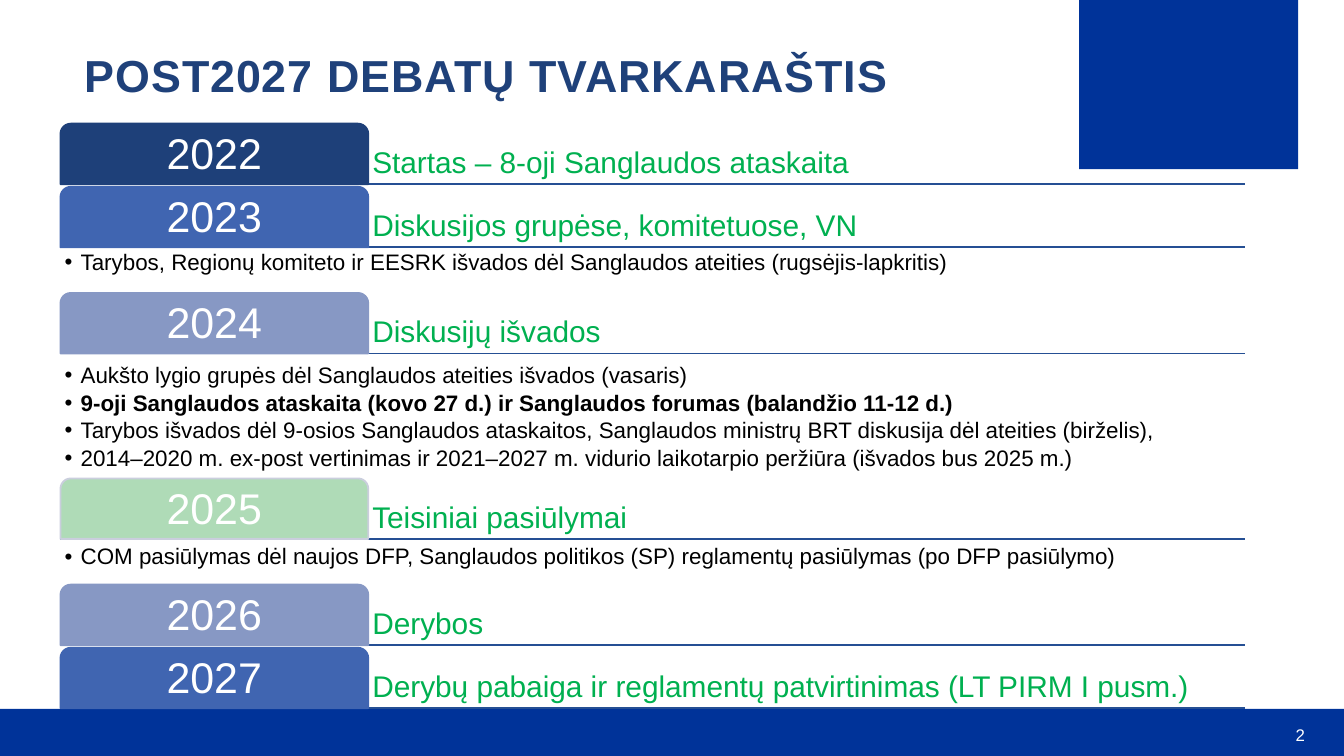
from dataclasses import dataclass
from typing import NamedTuple

from lxml.etree import SubElement
from pptx import Presentation
from pptx.dml.color import RGBColor
from pptx.enum.shapes import MSO_CONNECTOR, MSO_SHAPE
from pptx.enum.text import MSO_ANCHOR, PP_ALIGN
from pptx.oxml.ns import qn
from pptx.util import Inches, Pt


@dataclass(frozen=True)
class Theme:
    """Colours, font and type sizes of the deck."""
    font: str = "Arial"
    brand: str = "003399"
    title: str = "1F417A"
    rule: str = "254F94"
    heading: str = "00B050"
    body: str = "000000"
    light: str = "FFFFFF"
    navy: str = "1E4079"
    blue: str = "4065B1"
    lavender: str = "8798C4"
    green: str = "AFDBB7"
    green_edge: str = "CACEDD"
    title_size: float = 24
    year_size: float = 23
    heading_size: float = 16
    body_size: float = 12
    number_size: float = 9


class Box(NamedTuple):
    """A rectangle in inches."""
    left: float
    top: float
    width: float
    height: float

    def emu(self):
        """Return the rectangle as lengths."""
        return [Inches(value) for value in self]


class Stage(NamedTuple):
    """One year of the timeline with its heading and list."""
    year: str
    heading: str
    fill: str
    edge: str
    items: tuple = ()
    list_gap: float = 0
    list_height: float = 0


THEME = Theme()
PAGE_WIDTH = 10
PAGE_RATIO = 9 / 16
TAB_HEIGHT = 0.45
TAB_WIDTH = 2.29
ROW_STEP = 0.47
BOLD_ITEM = "9-oji Sanglaudos ataskaita (kovo 27 d.) ir Sanglaudos forumas (balandžio 11-12 d.)"
STAGES = [
    Stage("2022", "Startas – 8-oji Sanglaudos ataskaita", THEME.navy, THEME.navy),
    Stage("2023", "Diskusijos grupėse, komitetuose, VN", THEME.blue, THEME.blue, (
        "Tarybos, Regionų komiteto ir EESRK išvados dėl Sanglaudos ateities (rugsėjis-lapkritis)",
    ), 0, 0.32),
    Stage("2024", "Diskusijų išvados", THEME.lavender, THEME.lavender, (
        "Aukšto lygio grupės dėl Sanglaudos ateities išvados (vasaris)",
        BOLD_ITEM,
        "Tarybos išvados dėl 9-osios Sanglaudos ataskaitos, Sanglaudos ministrų BRT diskusija "
        "dėl ateities (birželis),",
        "2014–2020 m. ex-post vertinimas ir 2021–2027 m. vidurio laikotarpio peržiūra "
        "(išvados bus 2025 m.)",
    ), 0.05, 0.91),
    Stage("2025", "Teisiniai pasiūlymai", THEME.green, THEME.green_edge, (
        "COM pasiūlymas dėl naujos DFP, Sanglaudos politikos (SP) reglamentų pasiūlymas "
        "(po DFP pasiūlymo)",
    ), 0.02, 0.32),
    Stage("2026", "Derybos", THEME.lavender, THEME.lavender),
    Stage("2027", "Derybų pabaiga ir reglamentų patvirtinimas (LT PIRM I pusm.)",
          THEME.blue, THEME.blue),
]


def apply_format(target, values):
    """Set each named attribute of the target."""
    for name, value in values.items():
        setattr(target, name, value)


def format_frame(frame, inset, anchor=MSO_ANCHOR.TOP):
    """Set wrapping, anchor and equal insets of a text frame."""
    sides = ("left", "top", "right", "bottom")
    values = {f"margin_{side}": Inches(inset) for side in sides}
    apply_format(frame, {"word_wrap": True, "vertical_anchor": anchor, **values})


def write(para, text, size, color, bold=False, align=PP_ALIGN.LEFT, tracking=0, spacing=0.9):
    """Write one formatted run into a paragraph."""
    apply_format(para, {"alignment": align, "line_spacing": spacing})
    span = para.add_run()
    span.text = text
    apply_format(span.font, {"name": THEME.font, "size": Pt(size), "bold": bold})
    span.font.color.rgb = RGBColor.from_string(color)
    if tracking:
        span.font._element.set("spc", str(round(tracking * 100)))


def add_block(page, box, fill, edge=None, preset=MSO_SHAPE.RECTANGLE):
    """Add a filled shape with an optional outline."""
    block = page.shapes.add_shape(preset, *box.emu())
    block.shadow.inherit = False
    block.fill.solid()
    block.fill.fore_color.rgb = RGBColor.from_string(fill)
    if edge:
        block.line.color.rgb = RGBColor.from_string(edge)
        block.line.width = Pt(1)
    else:
        block.line.fill.background()
    return block


def add_rule(page, box):
    """Draw a line along the bottom edge of the box."""
    bottom = box.top + box.height
    ends = [Inches(value) for value in (box.left, bottom, box.left + box.width, bottom)]
    rule = page.shapes.add_connector(MSO_CONNECTOR.STRAIGHT, *ends)
    rule.line.color.rgb = RGBColor.from_string(THEME.rule)
    rule.line.width = Pt(1)
    SubElement(rule._element.spPr, qn("a:effectLst"))


def add_list(page, box, items):
    """Add a bulleted list that fills the box."""
    frame = page.shapes.add_textbox(*box.emu()).text_frame
    format_frame(frame, 0.03)
    for index, item in enumerate(items):
        para = frame.add_paragraph() if index else frame.paragraphs[0]
        apply_format(para, {"level": 1, "space_after": Pt(1.8)})
        properties = para._p.get_or_add_pPr()
        properties.set("marL", str(Inches(0.12)))
        properties.set("indent", str(Inches(-0.12)))
        SubElement(properties, qn("a:buFont")).set("typeface", THEME.font)
        SubElement(properties, qn("a:buChar")).set("char", "•")
        write(para, item, THEME.body_size, THEME.body, bold=item == BOLD_ITEM)


def add_stage(page, box, stage):
    """Add the year tab, heading and rule of one stage."""
    add_rule(page, box)
    heading_box = box._replace(left=box.left + TAB_WIDTH, width=box.width - TAB_WIDTH)
    heading = page.shapes.add_textbox(*heading_box.emu()).text_frame
    format_frame(heading, 0.03, MSO_ANCHOR.BOTTOM)
    write(heading.paragraphs[0], stage.heading, THEME.heading_size, THEME.heading)
    tab = add_block(page, box._replace(width=TAB_WIDTH), stage.fill, stage.edge,
                    MSO_SHAPE.ROUND_2_SAME_RECTANGLE)
    tab.adjustments[0], tab.adjustments[1] = 0.17, 0
    format_frame(tab.text_frame, 0.05, MSO_ANCHOR.MIDDLE)
    write(tab.text_frame.paragraphs[0], stage.year, THEME.year_size, THEME.light,
          align=PP_ALIGN.CENTER)


def add_timeline(page, box):
    """Stack all stages and their lists from the top of the box."""
    top = box.top
    for stage in STAGES:
        add_stage(page, box._replace(top=top, height=TAB_HEIGHT), stage)
        if stage.items:
            list_top = top + TAB_HEIGHT + stage.list_gap
            add_list(page, box._replace(top=list_top, height=stage.list_height), stage.items)
        top += ROW_STEP + stage.list_height


def add_title(page, box, text):
    """Place and format the title placeholder."""
    title = page.shapes.title
    apply_format(title, dict(zip(box._fields, box.emu())))
    format_frame(title.text_frame, 0.1, MSO_ANCHOR.TOP)
    title.text_frame.margin_top = title.text_frame.margin_bottom = Inches(0.05)
    write(title.text_frame.paragraphs[0], text, THEME.title_size, THEME.title,
          bold=True, tracking=0.5)


def add_frame(page, box, number):
    """Add the footer band, corner block and page number."""
    footer_top = box.height - 0.35
    add_block(page, Box(box.left, footer_top, box.width, 0.35), THEME.brand)
    add_block(page, Box(box.width - 1.97, box.top, 1.63, 1.26), THEME.brand)
    number_box = Box(box.width - 0.52, footer_top + 0.12, 0.23, 0.15)
    frame = page.shapes.add_textbox(*number_box.emu()).text_frame
    format_frame(frame, 0)
    write(frame.paragraphs[0], number, THEME.number_size, THEME.light,
          align=PP_ALIGN.RIGHT, tracking=0.3, spacing=1.0)


def main():
    """Build and save the deck."""
    deck = Presentation()
    page_box = Box(0, 0, PAGE_WIDTH, PAGE_WIDTH * PAGE_RATIO)
    deck.slide_width, deck.slide_height = page_box.emu()[2:]
    page = deck.slides.add_slide(deck.slide_layouts[5])
    add_frame(page, page_box, "2")
    add_title(page, Box(0.53, 0.35, 8.36, 0.64), "POST2027 DEBATŲ TVARKARAŠTIS")
    add_timeline(page, Box(0.45, 0.92, 8.81, 4.35))
    deck.save("out.pptx")


if __name__ == "__main__":
    main()
